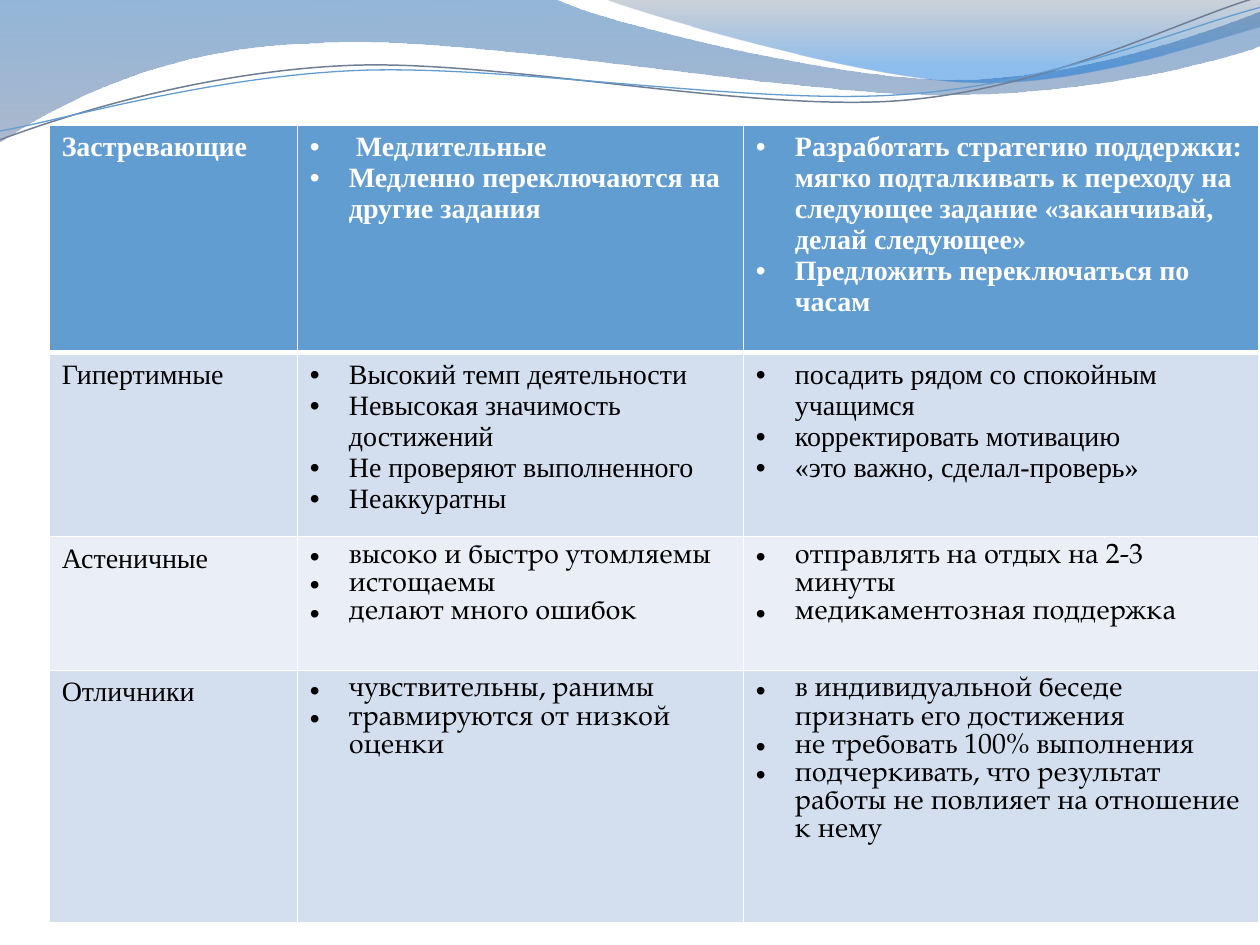
import math

from lxml import etree
from pptx import Presentation
from pptx.dml.color import RGBColor
from pptx.oxml.ns import qn
from pptx.util import Inches, Pt

BLANK_LAYOUT = 6
BULLET_INDENT = Inches(0.31)
CURVE_TILT = -2.7
SERIF, BOOK = "Times New Roman", "TeX Gyre Pagella"
COLORS = {
    "white": "FFFFFF", "black": "000000", "header": "629DD1",
    "band": "D3DFEE", "light": "EAEFF7", "navy": "125EAA",
    "slate": "697FA4", "gray": "596982", "azure": "0670DA",
    "gray_line": "707E95",
}

# Wave outlines: a pair is a straight step, six numbers are a Bezier curve
BROAD_WAVE = [
    (0, 0), (4.4, -0.01),
    (4.76, 0.17, 6.64, 0.63, 7.58, 0.63), (8.53, 0.63, 9.58, 0.26, 10, 0.09),
    (10.01, 0.36),
    (9.83, 0.44, 8.7, 0.76, 7.46, 0.75), (6.22, 0.75, 3.82, 0.28, 2.57, 0.34),
    (1.29, 0.36, 0.46, 0.83, -0.01, 1.13), (0, 0),
]
RIGHT_WAVE = [
    (4.79, -0.01),
    (5.09, 0.11, 6.82, 0.62, 7.69, 0.65), (8.56, 0.69, 9.61, 0.32, 10, 0.21),
    (10, 0), (4.79, -0.01),
]
GRAY_CURVE = [
    (0, 1.11),
    (0.48, 0.93, 1.58, 0.57, 2.77, 0.52), (3.95, 0.47, 5.93, 0.89, 7.13, 0.8),
    (8.33, 0.71, 9.38, 0.15, 9.98, -0.02),
]
BLUE_CURVE = [
    (0, 1.04),
    (0.47, 0.96, 1.64, 0.61, 2.83, 0.56), (4.03, 0.51, 5.97, 0.84, 7.17, 0.75),
    (8.36, 0.67, 9.41, 0.21, 10, 0.06),
]

# Table: type of pupil, features, advice
COLUMN_WIDTHS = [1.97, 3.54, 4.09]
ROW_HEIGHTS = [1.81, 1.46, 1.06, 2]
ROW_FILLS = ["header", "band", "light", "band"]
LIST_FONTS = [SERIF, SERIF, BOOK, BOOK]
PUPILS = [
    ("Застревающие",
     [" Медлительные", "Медленно переключаются на другие задания"],
     ["Разработать стратегию поддержки: мягко подталкивать к переходу на "
      "следующее задание «заканчивай, делай следующее»",
      "Предложить переключаться по часам"]),
    ("Гипертимные",
     ["Высокий темп деятельности", "Невысокая значимость достижений",
      "Не проверяют выполненного", "Неаккуратны"],
     ["посадить рядом со спокойным учащимся", "корректировать мотивацию",
      "«это важно, сделал-проверь»"]),
    ("Астеничные",
     ["высоко и быстро утомляемы", "истощаемы", "делают много ошибок"],
     ["отправлять на отдых на 2-3 минуты", "медикаментозная поддержка"]),
    ("Отличники",
     ["чувствительны, ранимы", "травмируются от низкой оценки"],
     ["в индивидуальной беседе признать его достижения",
      "не требовать 100% выполнения",
      "подчеркивать, что результат работы не повлияет на отношение к нему"]),
]


def rgb(name):
    return RGBColor.from_string(COLORS[name])


def level_points(step, tilt):
    """Points of one step in EMU, turned back by the tilt of the shape."""
    sin, cos = math.sin(math.radians(-tilt)), math.cos(math.radians(-tilt))
    center_x, center_y = (5, 0.57)
    offsets = [(x - center_x, y - center_y) for x, y in zip(step[::2], step[1::2])]
    return [(Inches(center_x + dx * cos - dy * sin),
             Inches(center_y + dx * sin + dy * cos)) for dx, dy in offsets]


def add_outline(slide, outline, close, tilt=0):
    steps = [level_points(step, tilt) for step in outline]
    anchors = [step[-1] for step in steps]
    builder = slide.shapes.build_freeform(*anchors[0], scale=1)
    builder.add_line_segments(anchors[1:], close=close)
    outline_shape = builder.convert_to_shape()
    outline_shape.shadow.inherit = False
    outline_shape.rotation = tilt

    # Give the curved steps their Bezier control points
    left, top = (min(values) for values in zip(*anchors))
    lines = list(outline_shape._element.iter(qn("a:lnTo")))
    for line, step in zip(lines, steps[1:]):
        if len(step) == 3:
            line.tag = qn("a:cubicBezTo")
            line.clear()
            for x, y in step:
                etree.SubElement(line, qn("a:pt"), x=str(x - left), y=str(y - top))
    return outline_shape


def add_wave(slide, outline, stops):
    wave = add_outline(slide, outline, True)
    wave.line.fill.background()
    wave.fill.gradient()
    wave.fill.gradient_angle = 270
    for stop, (position, color, opacity) in zip(wave.fill.gradient_stops, stops):
        stop.position = position
        stop.color.rgb = rgb(color)
    # Opacity of each gradient stop
    tints = list(wave._element.spPr.iter(qn("a:srgbClr")))
    for tint, (_, _, opacity) in zip(tints, stops):
        etree.SubElement(tint, qn("a:alpha"), val=str(opacity * 1000))


def add_curve(slide, outline, color, width):
    curve = add_outline(slide, outline, False, CURVE_TILT)
    curve.fill.background()
    curve.line.color.rgb = rgb(color)
    curve.line.width = Pt(width)


def set_borders(cell, top, bottom):
    properties = cell._tc.get_or_add_tcPr()
    for side, width in (("L", 1), ("R", 1), ("T", top), ("B", bottom)):
        border = etree.SubElement(properties, qn(f"a:ln{side}"), w=str(Pt(width)))
        fill = etree.SubElement(border, qn("a:solidFill"))
        etree.SubElement(fill, qn("a:srgbClr"), val=COLORS["white"])


def add_bullet(paragraph):
    properties = paragraph._p.get_or_add_pPr()
    properties.set("marL", str(BULLET_INDENT))
    properties.set("indent", str(-BULLET_INDENT))
    etree.SubElement(properties, qn("a:buFont"), typeface="Arial")
    etree.SubElement(properties, qn("a:buChar"), char="•")


def fill_cell(cell, lines, font, header, bulleted):
    cell.text_frame.text = "\n".join(lines)
    for paragraph in cell.text_frame.paragraphs:
        if bulleted:
            add_bullet(paragraph)
        for run in paragraph.runs:
            run.font.name = font
            run.font.size = Pt(16)
            run.font.bold = header
            run.font.color.rgb = rgb("white" if header else "black")


def add_pupil_table(slide):
    table = slide.shapes.add_table(
        len(PUPILS), len(COLUMN_WIDTHS), Inches(0.39), Inches(0.99),
        Inches(sum(COLUMN_WIDTHS)), Inches(sum(ROW_HEIGHTS))).table
    for column, width in zip(table.columns, COLUMN_WIDTHS):
        column.width = Inches(width)
    for r, (pupil, features, advice) in enumerate(PUPILS):
        table.rows[r].height = Inches(ROW_HEIGHTS[r])
        for c, lines in enumerate(([pupil], features, advice)):
            cell = table.cell(r, c)
            set_borders(cell, 3 if r == 1 else 1, 3 if r == 0 else 1)
            cell.fill.solid()
            cell.fill.fore_color.rgb = rgb(ROW_FILLS[r])
            fill_cell(cell, lines, LIST_FONTS[r] if c else SERIF, r == 0, c > 0)


def main():
    deck = Presentation()
    deck.slide_width, deck.slide_height = Inches(10), Inches(7.5)
    slide = deck.slides.add_slide(deck.slide_layouts[BLANK_LAYOUT])

    # Waves along the top
    add_wave(slide, BROAD_WAVE, [(0, "navy", 45), (1, "slate", 55)])
    add_wave(slide, RIGHT_WAVE, [(0, "gray", 30), (0.8, "azure", 45)])
    add_curve(slide, GRAY_CURVE, "gray_line", 0.85)
    add_curve(slide, BLUE_CURVE, "header", 0.75)

    add_pupil_table(slide)
    deck.save("out.pptx")


if __name__ == "__main__":
    main()
